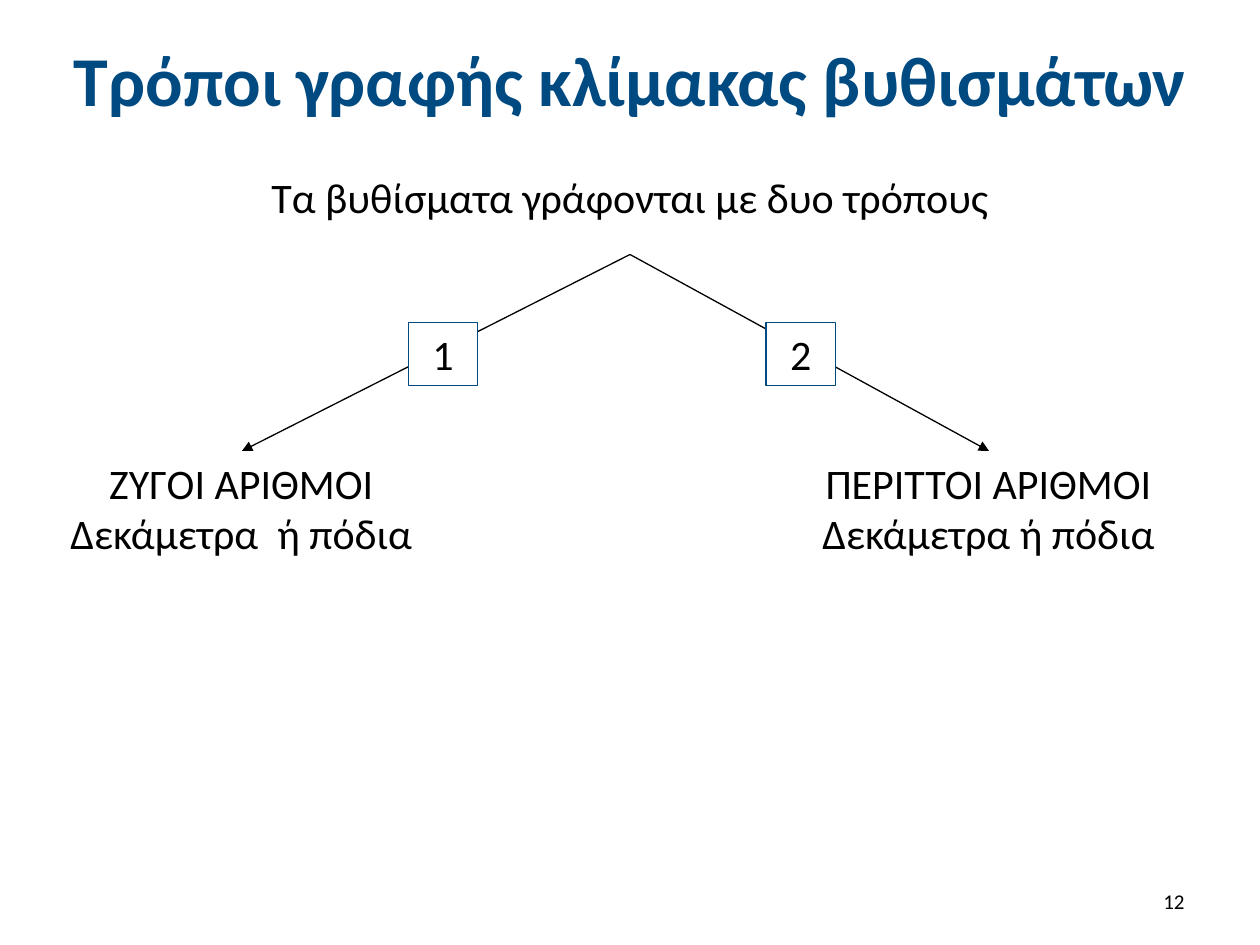
import pptx
import pptx.dml.color
import pptx.enum.shapes
import pptx.enum.text
import pptx.oxml
import pptx.oxml.ns
import pptx.util
from pptx.util import Inches

FONT = "Calibri"
BLUE, BLACK, WHITE = "004A82", "000000", "FFFFFF"
ALIGN = pptx.enum.text.PP_ALIGN
ANCHOR = pptx.enum.text.MSO_ANCHOR


def color(value):
    return pptx.dml.color.RGBColor.from_string(value)


def write(shape, lines, size=24, text_color=BLACK, bold=False,
          align=ALIGN.CENTER, anchor=ANCHOR.TOP):
    frame = shape.text_frame
    frame.word_wrap = True
    frame.vertical_anchor = anchor
    frame.text = "\n".join(lines)
    for paragraph in frame.paragraphs:
        paragraph.alignment = align
        paragraph.font.name = FONT
        paragraph.font.size = pptx.util.Pt(size)
        paragraph.font.bold = bold
        paragraph.font.color.rgb = color(text_color)


def add_text(slide, box, lines, **style):
    shape = slide.shapes.add_textbox(*map(Inches, box))
    write(shape, lines, **style)


def add_box(slide, box, lines, line_color=None):
    shape = slide.shapes.add_shape(
        pptx.enum.shapes.MSO_SHAPE.RECTANGLE, *map(Inches, box))
    shape.shadow.inherit = False
    shape.fill.solid()
    shape.fill.fore_color.rgb = color(WHITE)
    if line_color:
        shape.line.color.rgb = color(line_color)
        shape.line.width = pptx.util.Pt(0.75)
    else:
        shape.line.fill.background()
    write(shape, lines)


def add_arrow(slide, start, end):
    connector = slide.shapes.add_connector(
        pptx.enum.shapes.MSO_CONNECTOR.STRAIGHT, *map(Inches, start + end))
    connector.line.color.rgb = color(BLACK)
    connector.line.width = pptx.util.Pt(0.75)
    namespace = pptx.oxml.ns.nsdecls("a")
    connector.line._get_or_add_ln().append(
        pptx.oxml.parse_xml(f'<a:tailEnd {namespace} type="triangle"/>'))
    connector._element.spPr.append(
        pptx.oxml.parse_xml(f"<a:effectLst {namespace}/>"))


def add_branch(slide, root, box, number, number_left, arrow_x, lines):
    """Arrow from the root to the box, with a numbered square on the way."""
    add_arrow(slide, root, (arrow_x, box[1]))
    add_box(slide, (number_left, 2.56, 0.55, 0.5), [number], BLUE)
    add_box(slide, box, lines)


def main():
    presentation = pptx.Presentation()
    presentation.slide_width = Inches(10)
    presentation.slide_height = Inches(7.5)
    slide = presentation.slides.add_slide(presentation.slide_layouts[6])

    add_text(slide, (0, 0.13, 10, 0.99), ["Τρόποι γραφής κλίμακας βυθισμάτων"],
             size=40, text_color=BLUE, bold=True, anchor=ANCHOR.MIDDLE)
    add_text(slide, (0.5, 1.31, 9, 0.71),
             ["Τα βυθίσματα γράφονται με δυο τρόπους"])
    add_text(slide, (7.17, 6.95, 2.33, 0.4), ["12"],
             size=12, align=ALIGN.RIGHT, anchor=ANCHOR.MIDDLE)

    root = (5, 2.02)
    add_branch(slide, root, (0.26, 3.58, 3.31, 0.91), "1", 3.24, 1.92,
               ["ΖΥΓΟΙ ΑΡΙΘΜΟΙ", "Δεκάμετρα  ή πόδια"])
    add_branch(slide, root, (6.19, 3.58, 3.31, 0.91), "2", 6.08, 7.85,
               ["ΠΕΡΙΤΤΟΙ ΑΡΙΘΜΟΙ", "Δεκάμετρα ή πόδια"])

    presentation.save("out.pptx")


if __name__ == "__main__":
    main()
